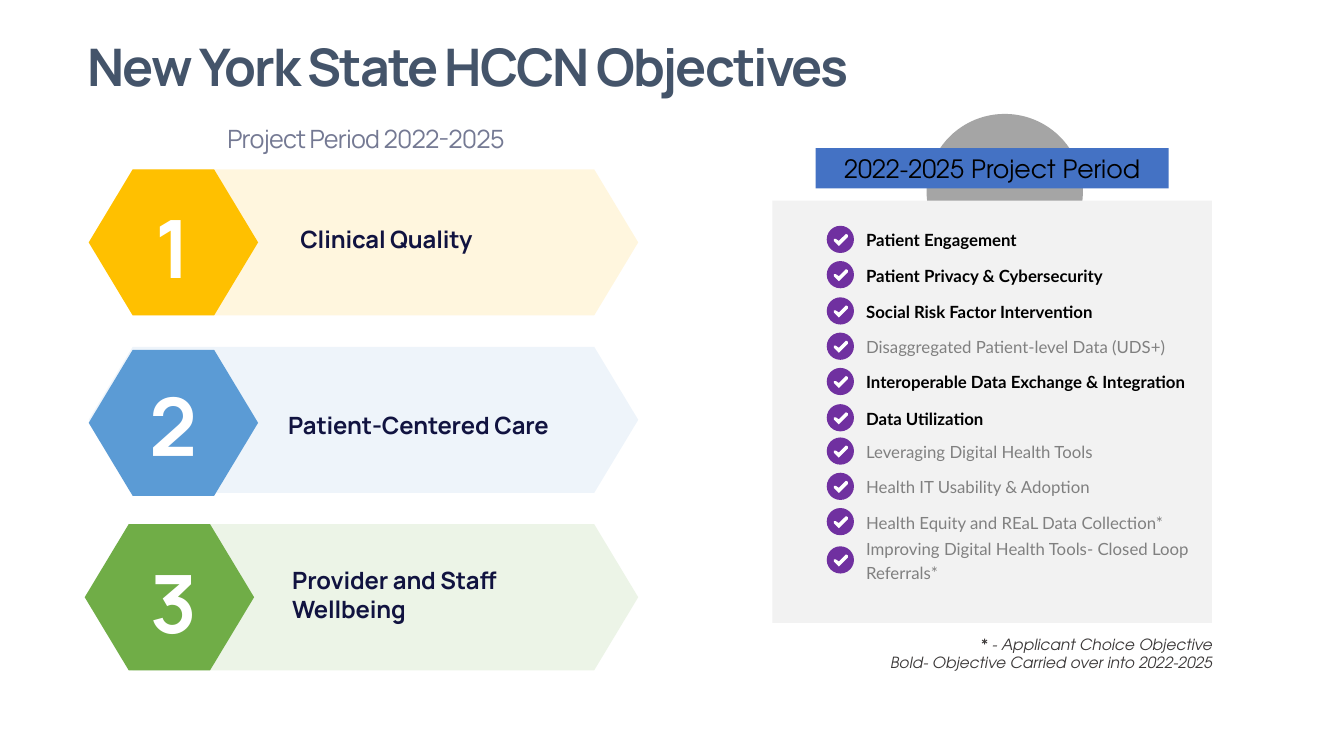
from lxml import etree
from pptx import Presentation
from pptx import util as u
from pptx.dml.color import RGBColor
from pptx.enum import shapes, text
from pptx.oxml.ns import qn

PX = 9144  # 100 px to the inch

WHITE = RGBColor(0xFF, 0xFF, 0xFF)
BLACK = RGBColor(0x00, 0x00, 0x00)
SLATE = RGBColor(0x44, 0x54, 0x6A)
NAVY = RGBColor(0x11, 0x13, 0x40)
MUTED = RGBColor(0x74, 0x79, 0x93)
GREY = RGBColor(0x80, 0x80, 0x80)
SILVER = RGBColor(0xA5, 0xA5, 0xA5)
PANEL = RGBColor(0xF2, 0xF2, 0xF2)
CHARCOAL = RGBColor(0x3B, 0x38, 0x38)
PURPLE = RGBColor(0x70, 0x30, 0xA0)
ROYAL = RGBColor(0x44, 0x72, 0xC4)
GOLD = RGBColor(0xFF, 0xC0, 0x00)
SKY = RGBColor(0x5B, 0x9B, 0xD5)
GREEN = RGBColor(0x70, 0xAD, 0x47)

HEADING, BODY, ACCENT = "Manrope", "Lato", "TeX Gyre Adventor"
LEFT, CENTER = text.PP_ALIGN.LEFT, text.PP_ALIGN.CENTER
RIGHT, JUSTIFY = text.PP_ALIGN.RIGHT, text.PP_ALIGN.JUSTIFY
TOP, MIDDLE, BOTTOM = text.MSO_ANCHOR.TOP, text.MSO_ANCHOR.MIDDLE, text.MSO_ANCHOR.BOTTOM

TICK = [(12, 20), (7, 15), (7, 13), (9, 13), (12, 15), (19, 8), (21, 9), (21, 11)]

# colour, band opacity, band top, badge left and top, label, label box
GOALS = [
    (GOLD, 13, 168, 88, 168, "Clinical Quality", (288, 217, 315, 39)),
    (SKY, 10, 344, 88, 347, "Patient-Centered Care", (276, 402, 315, 39)),
    (GREEN, 13, 520, 84, 520, "Provider and Staff Wellbeing", (280, 556, 315, 67)),
]

# top of the tick, label, carried over, lines
OBJECTIVES = [
    (224, "Patient Engagement", True, 1),
    (259, "Patient Privacy & Cybersecurity", True, 1),
    (295, "Social Risk Factor Intervention", True, 1),
    (330, "Disaggregated Patient-level Data (UDS+)", False, 1),
    (365, "Interoperable Data Exchange & Integration", True, 1),
    (401, "Data Utilization", True, 1),
    (434, "Leveraging Digital Health Tools", False, 1),
    (469, "Health IT Usability & Adoption", False, 1),
    (504, "Health Equity and REaL Data Collection*", False, 1),
    (542, "Improving Digital Health Tools- Closed Loop Referrals*", False, 2),
]


class Deck:
    def __init__(self, width, height):
        self.prs = Presentation()
        self.prs.slide_width, self.prs.slide_height = width * PX, height * PX
        self.slide = self.prs.slides.add_slide(self.prs.slide_layouts[5])
        self.shapes = self.slide.shapes

    def paint(self, sp, color, opacity=100):
        sp.shadow.inherit = False
        sp.fill.solid()
        sp.fill.fore_color.rgb = color
        sp.line.fill.background()
        if opacity < 100:
            rgb = sp._element.spPr.find(qn("a:solidFill")).find(qn("a:srgbClr"))
            etree.SubElement(rgb, qn("a:alpha")).set("val", str(opacity * 1000))
        return sp

    def shape(self, kind, x, y, w, h, color, opacity=100):
        sp = self.shapes.add_shape(kind, x * PX, y * PX, w * PX, h * PX)
        return self.paint(sp, color, opacity)

    def hexagon(self, x, y, w, color, opacity=100):
        sp = self.shape(shapes.MSO_SHAPE.HEXAGON, x, y, w, 145, color, opacity)
        sp.adjustments[0] = 0.301

    def polygon(self, points, color):
        builder = self.shapes.build_freeform(*points[0], scale=PX)
        builder.add_line_segments(points[1:])
        self.paint(builder.convert_to_shape(), color)

    def set_text(self, sp, lines, font, size, color, align=LEFT, anchor=TOP, wrap=True,
                 bold=False, italic=False, spacing=0, leading=None):
        """Fill a shape with one paragraph per line; spacing is in 1/100 pt."""
        tf = sp.text_frame
        tf.word_wrap, tf.vertical_anchor = wrap, anchor
        tf.auto_size = text.MSO_AUTO_SIZE.NONE
        for i, line in enumerate(lines):
            p = tf.add_paragraph() if i else tf.paragraphs[0]
            p.alignment = align
            if leading:
                p.line_spacing = u.Pt(leading)
            r = p.add_run()
            r.text = line
            r.font.name, r.font.size = font, u.Pt(size)
            r.font.bold, r.font.italic = bold, italic
            r.font.color.rgb = color
            if spacing:
                r._r.get_or_add_rPr().set("spc", str(spacing))
        return tf

    def label(self, x, y, w, h, lines, font, size, color, **style):
        sp = self.shapes.add_textbox(x * PX, y * PX, w * PX, h * PX)
        return self.set_text(sp, lines, font, size, color, **style)

    def title(self, x, y, w, h, line):
        sp = self.slide.shapes.title
        sp.left, sp.top, sp.width, sp.height = x * PX, y * PX, w * PX, h * PX
        self.set_text(sp, [line], HEADING, 37, SLATE, wrap=False, bold=True, spacing=-140)

    def goal(self, number, color, opacity, band_top, x, y, name, box):
        self.hexagon(88, band_top, 545, color, opacity)
        self.hexagon(x, y, 168, color)
        self.label(112, band_top + 23, 120, 107, [str(number)], HEADING, 57.5, WHITE,
                   align=CENTER, anchor=MIDDLE, bold=True, spacing=-140)
        self.label(*box, [name], HEADING, 17, NAVY, anchor=BOTTOM, bold=True, spacing=-10)

    def objective(self, top, name, carried_over, lines):
        """A grouped row: tick in a disc, with its label centred beside it."""
        self.shapes = self.slide.shapes.add_group_shape().shapes
        self.shape(shapes.MSO_SHAPE.OVAL, 820, top, 27, 27, PURPLE)
        self.polygon([(820 + dx, top + dy) for dx, dy in TICK], WHITE)
        height = 3 + 25 * lines
        tf = self.label(854, top + 12 - height // 2, 358, height, [name], BODY, 12,
                        BLACK if carried_over else GREY, bold=carried_over, anchor=MIDDLE,
                        align=JUSTIFY if lines == 1 else LEFT, leading=17.5)
        tf.margin_left = tf.margin_right = 5 * PX
        tf.margin_top = tf.margin_bottom = 2 * PX
        self.shapes = self.slide.shapes


def main():
    deck = Deck(1333, 750)
    deck.title(77, 29, 823, 72, "New York State HCCN Objectives")

    deck.label(131, 117, 464, 40, ["Project Period 2022-2025"], HEADING, 18, MUTED,
               align=CENTER, spacing=-60)
    for number, goal in enumerate(GOALS, 1):
        deck.goal(number, *goal)

    deck.shape(shapes.MSO_SHAPE.OVAL, 919, 113, 155, 155, SILVER)
    deck.shape(shapes.MSO_SHAPE.RECTANGLE, 766, 199, 436, 419, PANEL)
    for objective in OBJECTIVES:
        deck.objective(*objective)
    banner = deck.shape(shapes.MSO_SHAPE.RECTANGLE, 809, 147, 350, 40, ROYAL)
    deck.set_text(banner, ["2022-2025 Project Period"], ACCENT, 18, BLACK, align=CENTER)
    deck.label(732, 625, 481, 47,
               ["* - Applicant Choice Objective", "Bold- Objective Carried over into 2022-2025"],
               ACCENT, 11, CHARCOAL, align=RIGHT, italic=True)

    deck.prs.save("out.pptx")


if __name__ == "__main__":
    main()
